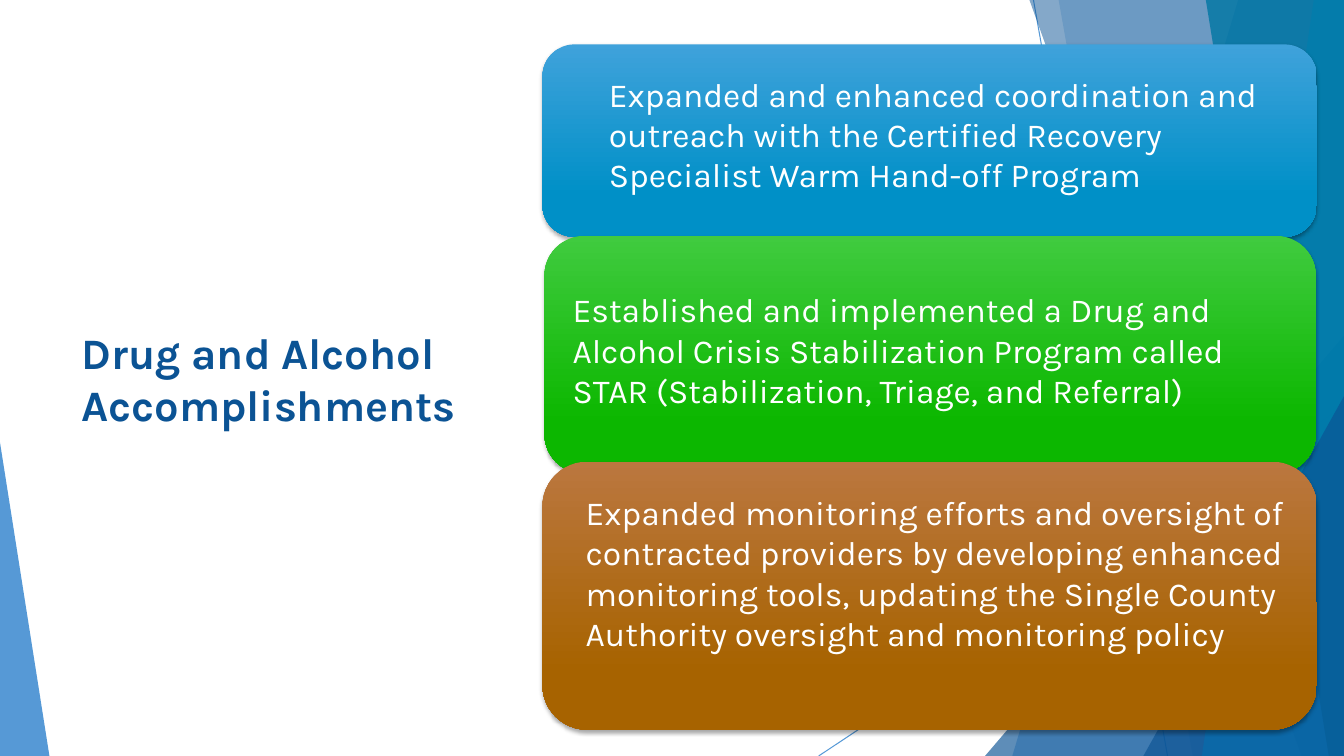
from lxml import etree
from pptx import Presentation, util as u
from pptx.dml.color import RGBColor
from pptx.enum import shapes as s, text as t
from pptx.oxml import ns

W, H = 13.33, 7.5
FONT, NAVY, BLUE, WHITE = "Karla", "0B5394", "0F6FC6", "FFFFFF"

deck = Presentation()
deck.slide_width, deck.slide_height = u.Inches(W), u.Inches(H)
slide = deck.slides.add_slide(deck.slide_layouts[6])
art = slide.shapes


def paint(fmt, hue, alpha=100):
    """Give a fill one hex colour, with an opacity in percent."""
    fmt.solid()
    fmt.fore_color.rgb = RGBColor.from_string(hue)
    if alpha < 100:
        tone = fmt._xPr.find(".//" + ns.qn("a:srgbClr"))
        etree.SubElement(tone, ns.qn("a:alpha"), val=str(alpha * 1000))


def write(words, box, anchor, style):
    frame = art.add_textbox(*map(u.Inches, box)).text_frame
    frame.word_wrap = True
    frame.vertical_anchor = anchor
    run = frame.paragraphs[0].add_run()
    run.text = words
    hue, *rest = style
    paint(run.font.fill, hue)
    for key, val in zip(("size", "bold"), rest):
        setattr(run.font, key, val)
    run.font.name = FONT


# Thin lines behind the facets
for ends in ((10.25, 0, 11.58, H), (W, 4.03, 8.12, H)):
    line = art.add_connector(s.MSO_CONNECTOR.STRAIGHT, *map(u.Inches, ends))
    line.line.width = u.Pt(0.75)
    paint(line.line.fill, BLUE, 70)
    etree.SubElement(line._element.spPr, ns.qn("a:effectLst"))

# Facets, back to front: a wedge has a top and a bottom x at its left side,
# a peak has left, top, right and the place of its tip
facets = [
    ((12.28, 10.04), BLUE, 36),
    ((10.5, 11.83), BLUE, 20),
    ((9.77, 3.33, W, 1), NAVY, 66),
    ((10.21, 12.91), NAVY, 50),
    ((13.03, 11.92), "009DD9", 70),
    ((11.96, 13.18), "0076A3", 80),
    ((11.34, 3.93, W, 1), NAVY, 66),
    ((0, 4.39, 0.49, 0), BLUE, 70),
]
for spot, hue, alpha in facets:
    if len(spot) == 2:
        top, base = spot
        pen = art.build_freeform(u.Inches(top), 0)
        rest = [(W, 0), (W, H), (base, H)]
        pen.add_line_segments([(u.Inches(x), u.Inches(y)) for x, y in rest])
        facet = pen.convert_to_shape()
    else:
        left, top, right, tip = spot
        box = left, top, right - left, H - top
        facet = art.add_shape(s.MSO_SHAPE.ISOSCELES_TRIANGLE, *map(u.Inches, box))
        facet.adjustments[0] = tip
    paint(facet.fill, hue, alpha)
    facet.line.fill.background()
    facet.shadow.inherit = False

write("Drug and Alcohol Accomplishments", (0.71, 1.51, 4.2, 4.48),
      t.MSO_ANCHOR.MIDDLE, (NAVY, u.Pt(31), True))

# Cards: box, gradient colours, text box, words
cards = [
    ((5.38, 0.44, 7.68, 1.91), ("3FA2DB", "0090C7"), (5.94, 0.68, 6.68, 1.31),
     "Expanded and enhanced coordination and outreach with the Certified "
     "Recovery Specialist Warm Hand-off Program"),
    ((5.4, 2.34, 7.65, 2.36), ("40CB3F", "0CB700"), (5.58, 2.82, 7.31, 1.31),
     "Established and implemented a Drug and Alcohol Crisis Stabilization "
     "Program called STAR (Stabilization, Triage, and Referral)"),
    ((5.38, 4.58, 7.68, 2.66), ("BB773F", "A76300"), (5.71, 4.83, 7.18, 1.72),
     "Expanded monitoring efforts and oversight of contracted providers by "
     "developing enhanced monitoring tools, updating the Single County "
     "Authority oversight and monitoring policy"),
]
for box, hues, _, _ in cards:
    card = art.add_shape(s.MSO_SHAPE.ROUNDED_RECTANGLE, *map(u.Inches, box))
    card.line.fill.background()
    card.fill.gradient()
    card.fill.gradient_angle = 270
    for stop, hue, place in zip(card.fill.gradient_stops, hues, (0, 0.78)):
        stop.color.rgb = RGBColor.from_string(hue)
        stop.position = place
    card.shadow.inherit = False
    glow = etree.SubElement(
        card._element.spPr.find(ns.qn("a:effectLst")), ns.qn("a:outerShdw"),
        blurRad=str(u.Pt(3)), dist=str(u.Pt(2)), dir="5400000", rotWithShape="0")
    tone = etree.SubElement(glow, ns.qn("a:srgbClr"), val="000000")
    etree.SubElement(tone, ns.qn("a:alpha"), val="35000")

for _, _, box, words in cards:
    write(words, box, t.MSO_ANCHOR.TOP, (WHITE, u.Pt(24)))

deck.save("out.pptx")
